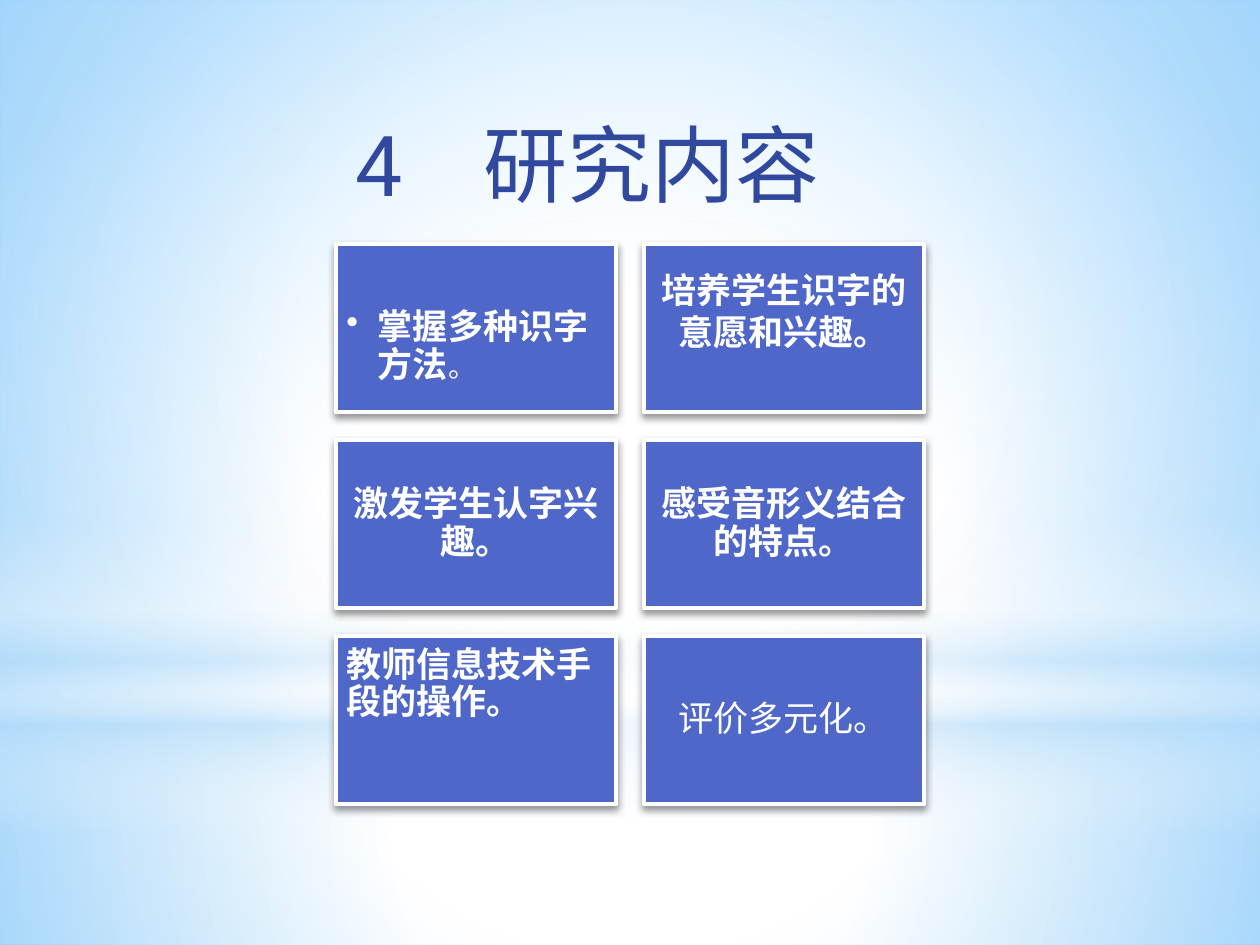
from dataclasses import dataclass

import pptx
import pptx.dml.color
import pptx.enum.lang
import pptx.enum.shapes
import pptx.enum.text
import pptx.oxml
import pptx.oxml.ns
import pptx.util

Pt = pptx.util.Pt
RGB = pptx.dml.color.RGBColor
Shape = pptx.enum.shapes.MSO_SHAPE
Align = pptx.enum.text.PP_ALIGN
Anchor = pptx.enum.text.MSO_ANCHOR
qn = pptx.oxml.ns.qn
NS = pptx.oxml.ns.nsdecls("a")

WHITE = RGB(0xFF, 0xFF, 0xFF)
SKY = RGB(0x63, 0xBC, 0xFF)
PALE = RGB(0xB4, 0xDC, 0xFA)
BLUE = RGB(0x4E, 0x67, 0xC8)
NAVY = RGB(0x31, 0x48, 0x9F)
FONT = "Roboto"

CARD_W, CARD_H, CARD_GAP = 160, 96, 16
GRID_LEFT, GRID_TOP, COLUMNS = 192, 139.6, 2
INSET = 6
CENTER = (50, 50, 50, 50)


@dataclass(frozen=True)
class Stop:
    pos: int
    color: RGB
    alpha: int = 100


@dataclass(frozen=True)
class Glow:
    shape: Shape
    top: float
    height: float
    stops: tuple[Stop, ...]
    focus: tuple[int, ...] | None = CENTER


@dataclass(frozen=True)
class Card:
    text: str
    bold: bool = True
    align: Align = Align.CENTER
    anchor: Anchor = Anchor.MIDDLE
    line_spacing: float = 0.9
    top: float = INSET
    bottom: float = INSET
    bullet: bool = False
    light_tail: str = ""


BACKGROUND = (Stop(0, WHITE), Stop(42, WHITE), Stop(100, SKY))
GLOWS = (
    Glow(Shape.RECTANGLE, 402, 138,
         (Stop(0, WHITE, 91), Stop(37, WHITE, 76), Stop(100, PALE, 79))),
    Glow(Shape.RECTANGLE, 0, 402,
         (Stop(0, WHITE, 89), Stop(48, WHITE, 62), Stop(100, PALE, 79))),
    Glow(Shape.RECTANGLE, 296.6, 180,
         (Stop(0, WHITE, 0), Stop(29, WHITE, 30), Stop(45, PALE, 40),
          Stop(55, WHITE, 26), Stop(65, PALE, 60), Stop(100, WHITE, 0)), None),
    Glow(Shape.OVAL, 126, 402, (Stop(0, WHITE), Stop(56, WHITE, 0))),
)
CARDS = (
    Card("掌握多种识字方法", align=Align.LEFT, anchor=Anchor.TOP, top=37,
         bullet=True, light_tail="。"),
    Card("培养学生识字的意愿和兴趣。", line_spacing=1, bottom=26),
    Card("激发学生认字兴趣。"),
    Card("感受音形义结合的特点。"),
    Card("教师信息技术手段的操作。", align=Align.LEFT, anchor=Anchor.TOP),
    Card("评价多元化。", bold=False),
)


def set_gradient(fill, props, stops: tuple[Stop, ...], focus=None) -> None:
    fill.solid()
    gs = "".join(
        f'<a:gs pos="{st.pos * 1000}"><a:srgbClr val="{st.color}">'
        f'<a:alpha val="{st.alpha * 1000}"/></a:srgbClr></a:gs>'
        for st in stops)
    if focus:
        sides = " ".join(f'{k}="{v * 1000}"' for k, v in zip("ltrb", focus))
        course = f'<a:path path="circle"><a:fillToRect {sides}/></a:path>'
    else:
        course = '<a:lin ang="5400000" scaled="0"/>'
    grad = pptx.oxml.parse_xml(
        f'<a:gradFill {NS} rotWithShape="1"><a:gsLst>{gs}</a:gsLst>{course}</a:gradFill>')
    props.replace(props.find(qn("a:solidFill")), grad)


def add_text(p, text: str, *, size: float, color: RGB, bold: bool = False) -> None:
    r = p.add_run()
    r.text = text
    r.font.name = FONT
    r.font.size = Pt(size)
    r.font.bold = bold
    r.font.color.rgb = color
    r.font.language_id = pptx.enum.lang.MSO_LANGUAGE_ID.SIMPLIFIED_CHINESE


def add_glow(s, glow: Glow) -> None:
    sp = s.shapes.add_shape(glow.shape, 0, Pt(glow.top), Pt(720), Pt(glow.height))
    sp.shadow.inherit = False
    sp.line.fill.background()
    set_gradient(sp.fill, sp._element.spPr, glow.stops, glow.focus)


def add_title(s) -> None:
    sp = s.shapes.add_textbox(Pt(196), Pt(60.5), Pt(329), Pt(65.5))
    tf = sp.text_frame
    tf.word_wrap = True
    tf.auto_size = pptx.enum.text.MSO_AUTO_SIZE.SHAPE_TO_FIT_TEXT
    p = tf.paragraphs[0]
    add_text(p, "4\t研究内容", size=48, color=NAVY)
    p._p.get_or_add_pPr().append(pptx.oxml.parse_xml(
        f'<a:tabLst {NS}><a:tab pos="{Pt(73.5)}" algn="l"/></a:tabLst>'))


def add_card(s, card: Card, left: float, top: float) -> None:
    sp = s.shapes.add_shape(Shape.RECTANGLE, Pt(left), Pt(top), Pt(CARD_W), Pt(CARD_H))
    sp.fill.solid()
    sp.fill.fore_color.rgb = BLUE
    sp.line.color.rgb = WHITE
    sp.line.width = Pt(2.5)
    sp.shadow.inherit = False
    sp._element.spPr.find(qn("a:effectLst")).append(pptx.oxml.parse_xml(
        f'<a:outerShdw {NS} blurRad="{Pt(4.1)}" dist="{Pt(2)}" dir="5400000" '
        'rotWithShape="0"><a:srgbClr val="000000"><a:alpha val="40000"/>'
        '</a:srgbClr></a:outerShdw>'))
    tf = sp.text_frame
    tf.word_wrap = True
    tf.vertical_anchor = card.anchor
    tf.margin_left = tf.margin_right = Pt(INSET)
    tf.margin_top, tf.margin_bottom = Pt(card.top), Pt(card.bottom)
    p = tf.paragraphs[0]
    p.alignment = card.align
    p.line_spacing = card.line_spacing
    add_text(p, card.text, size=20, color=WHITE, bold=card.bold)
    if card.light_tail:
        add_text(p, card.light_tail, size=16, color=WHITE)
    if card.bullet:
        pPr = p._p.get_or_add_pPr()
        pPr.set("marL", str(Pt(18)))
        pPr.set("indent", str(-Pt(18)))
        pPr.append(pptx.oxml.parse_xml(f'<a:buChar {NS} char="•"/>'))


def main() -> None:
    prs = pptx.Presentation()
    prs.slide_width, prs.slide_height = Pt(720), Pt(540)
    s = prs.slides.add_slide(prs.slide_layouts[6])
    fill = s.background.fill
    fill.solid()
    set_gradient(fill, s._element.find(f".//{qn('p:bgPr')}"), BACKGROUND, (24, 44, 24, 12))
    for glow in GLOWS:
        add_glow(s, glow)
    add_title(s)
    for i, card in enumerate(CARDS):
        row, col = divmod(i, COLUMNS)
        add_card(s, card, GRID_LEFT + col * (CARD_W + CARD_GAP),
                 GRID_TOP + row * (CARD_H + CARD_GAP))
    prs.save("out.pptx")


if __name__ == "__main__":
    main()
